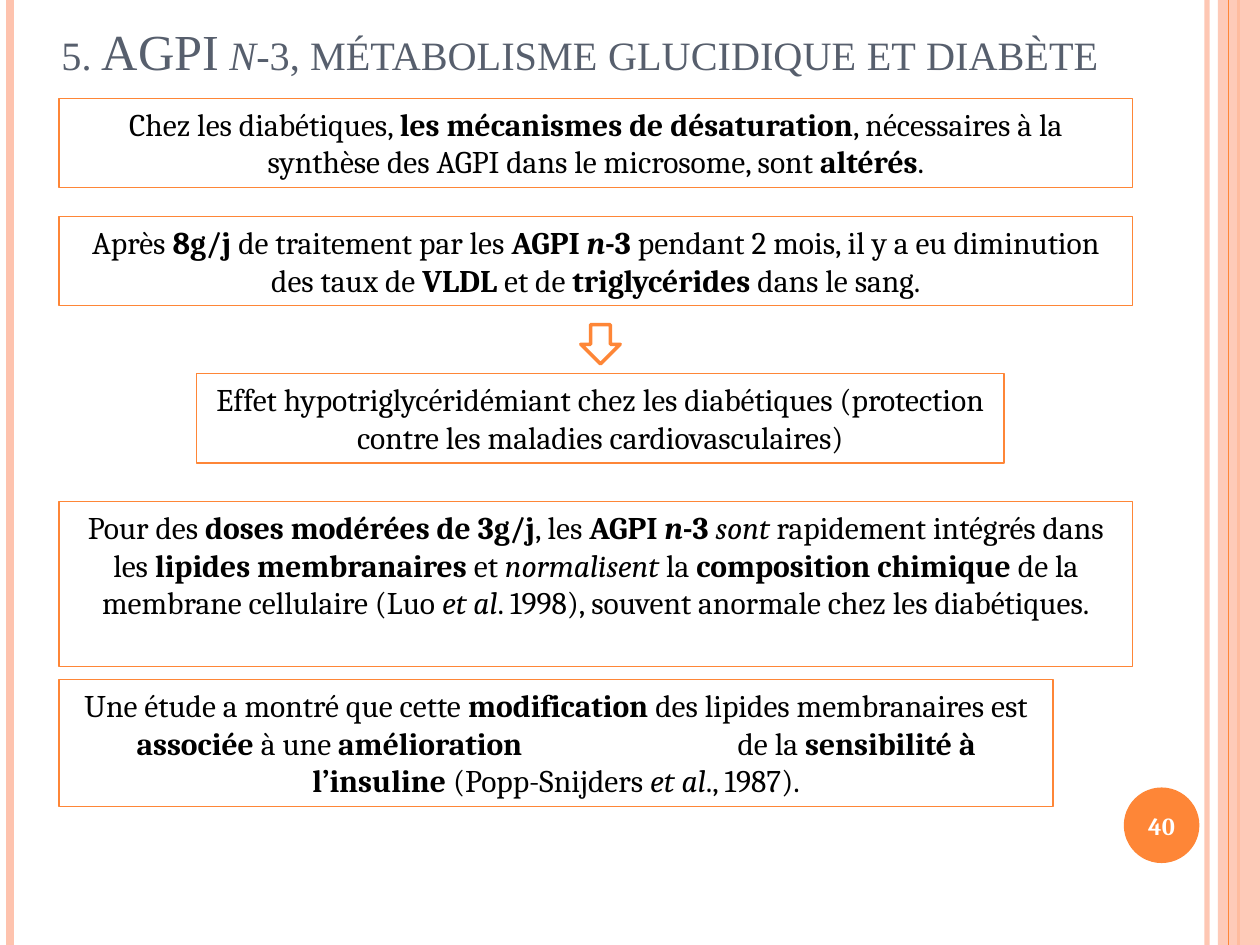
"""Build the slide on n-3 fatty acids, glucose metabolism and diabetes."""
import pptx
import pptx.util
import pptx.dml.color
import pptx.enum.shapes
import pptx.enum.text
import pptx.oxml
import pptx.oxml.ns

Pt = pptx.util.Pt
SHAPE = pptx.enum.shapes.MSO_SHAPE
ALIGN = pptx.enum.text.PP_ALIGN
ANCHOR = pptx.enum.text.MSO_ANCHOR

COLORS = {"orange": "FE8637", "peach": "FEC3AE", "title": "575F6D",
          "text": "000000", "white": "FFFFFF"}
W, H = 720, 540
LEFT, WIDE = 33.8, 613.4
GAP = 119

TITLE = [("5. AGPI ", ""), ("n", "i"),
         ("-3, métabolisme glucidique et diabète", "")]

BOXES = [
    ((LEFT, 56.2, WIDE, 51), [
        ("Chez les diabétiques, ", ""), ("les mécanismes de désaturation", "b"),
        (", nécessaires à la synthèse des AGPI dans le microsome, sont ", ""),
        ("altérés", "b"), (".", "")]),
    ((LEFT, 123.8, WIDE, 51), [
        ("Après ", ""), ("8g/j ", "b"), ("de traitement par les ", ""),
        ("AGPI ", "b"), ("n", "bi"), ("-3 ", "b"),
        ("pendant 2 mois, il y a eu diminution des taux de ", ""),
        ("VLDL", "b"), (" et de ", ""), ("triglycérides", "b"),
        (" dans le sang.", "")]),
    ((112.3, 213.6, 461.5, 51), [
        ("Effet hypotriglycéridémiant chez les diabétiques (protection "
         "contre les maladies cardiovasculaires)", "")]),
    ((LEFT, 286.6, WIDE, 94.3), [
        ("Pour des ", ""), ("doses modérées de 3g/j", "b"), (", les ", ""),
        ("AGPI ", "b"), ("n", "bi"), ("-3 ", "b"), ("sont", "i"),
        (" rapidement intégrés dans les ", ""), ("lipides membranaires ", "b"),
        ("et ", ""), ("normalisent ", "i"), ("la ", ""),
        ("composition chimique ", "b"), ("de la membrane cellulaire (Luo ", ""),
        ("et al", "i"), (". 1998), souvent anormale chez les diabétiques.", "")]),
    ((LEFT, 388.3, 568, 72.6), [
        ("Une étude a montré que cette ", ""), ("modification ", "b"),
        ("des lipides membranaires est ", ""), ("associée", "b"),
        (" à une ", ""), ("amélioration", "b"), (" ", "g"), ("de la ", ""),
        ("sensibilité à l’insuline", "b"), (" (Popp-Snijders ", ""),
        ("et al", "i"), ("., 1987).", "")]),
]

STRIPES = [(689.8, "peach", 3, 93), (5.8, "peach", 4.5, 100),
           (707.8, "orange", 1.5, 100)]
INNER_STRIPE = (702, "orange", 0.75, 100)


def rgb(name):
    return pptx.dml.color.RGBColor.from_string(COLORS[name])


def set_alpha(fill_parent, percent):
    color = fill_parent.find(".//" + pptx.oxml.ns.qn("a:srgbClr"))
    alpha = color.makeelement(pptx.oxml.ns.qn("a:alpha"), {"val": str(percent * 1000)})
    color.append(alpha)


def add_stripe(slide, x, color, width, opacity):
    line = slide.shapes.add_connector(
        pptx.enum.shapes.MSO_CONNECTOR.STRAIGHT, Pt(x), Pt(0), Pt(x), Pt(H))
    line.line.color.rgb = rgb(color)
    line.line.width = Pt(width)
    sp_pr = line._element.spPr
    if opacity < 100:
        set_alpha(sp_pr, opacity)
    sp_pr.append(sp_pr.makeelement(pptx.oxml.ns.qn("a:effectLst"), {}))


def add_shape(slide, kind, box, fill=None, line=None, width=0.75):
    sp = slide.shapes.add_shape(kind, *map(Pt, box))
    sp.shadow.inherit = False
    if fill:
        sp.fill.solid()
        sp.fill.fore_color.rgb = rgb(fill)
    else:
        sp.fill.background()
    if line:
        sp.line.color.rgb = rgb(line)
        sp.line.width = Pt(width)
    else:
        sp.line.fill.background()
    return sp


def write(sp, runs, size, font="Cambria", color="text", align=ALIGN.CENTER,
          anchor=ANCHOR.TOP, caps=False):
    tf = sp.text_frame
    tf.word_wrap = True
    tf.vertical_anchor = anchor
    p = tf.paragraphs[0]
    p.alignment = align
    for text, style in runs:
        r = p.add_run()
        r.text = text
        r.font.name = font
        r.font.size = Pt(size)
        r.font.color.rgb = rgb(color)
        r.font.bold = "b" in style
        r.font.italic = "i" in style
        if "g" in style:
            r.font._element.set("spc", str(GAP * 100))
        if caps:
            r.font._element.set("cap", "small")


def main():
    prs = pptx.Presentation()
    prs.slide_width, prs.slide_height = Pt(W), Pt(H)
    slide = prs.slides.add_slide(prs.slide_layouts[6])

    for stripe in STRIPES:
        add_stripe(slide, *stripe)
    band = add_shape(slide, SHAPE.RECTANGLE, (696, 0, 24, H), "peach")
    set_alpha(band._element.spPr, 87)
    add_stripe(slide, *INNER_STRIPE)

    badge = add_shape(slide, SHAPE.OVAL, (642.2, 450, 43.2, 43.2), "orange")
    write(badge, [("40", "b")], 14, color="white", anchor=ANCHOR.MIDDLE)
    tf = badge.text_frame
    tf.margin_left = tf.margin_right = tf.margin_top = tf.margin_bottom = 0

    title = slide.shapes.add_textbox(*map(Pt, (28, 8, 660, 41)))
    write(title, TITLE, 28.8, "Times New Roman", "title", ALIGN.LEFT, caps=True)

    for box, runs in BOXES:
        write(add_shape(slide, SHAPE.RECTANGLE, box, line="orange"), runs, 18)
    add_shape(slide, SHAPE.DOWN_ARROW, (331.9, 185.5, 22.5, 22.5),
              "white", "orange", 2)

    prs.save("out.pptx")


if __name__ == "__main__":
    main()
